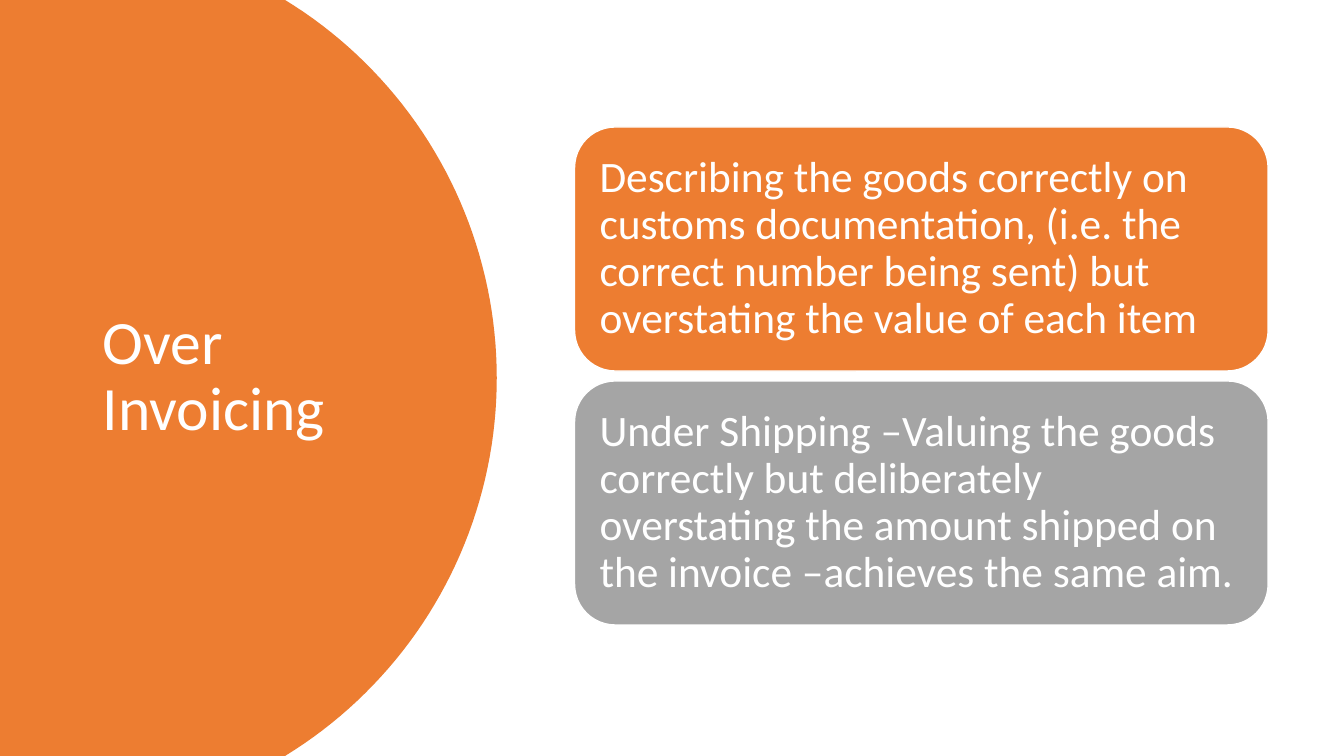
from dataclasses import dataclass
from math import asin, cos, sin

from pptx import Presentation, util as u
from pptx.dml.color import RGBColor
from pptx.enum import shapes, text

COLORS = {"orange": "ED7D31", "gray": "A5A5A5", "white": "FFFFFF"}
SLIDE_WIDTH, SLIDE_HEIGHT = u.Cm(33.87), u.Cm(19.05)
CARD_LEFT, CARD_TOP = 14.48, 3.2
CARD_WIDTH, CARD_HEIGHT, CARD_PITCH = 17.48, 6.15, 6.4
ARC_STEPS = 80


@dataclass
class Card:
    words: str
    color: str


CARDS = [
    Card("Describing the goods correctly on customs documentation, (i.e. the correct "
         "number being sent) but overstating the value of each item", "orange"),
    Card("Under Shipping –Valuing the goods correctly but deliberately overstating "
         "the amount shipped on the invoice –achieves the same aim.", "gray"),
]


def rgb(name: str) -> RGBColor:
    return RGBColor.from_string(COLORS[name])


def paint(shape, color: str) -> None:
    shape.shadow.inherit = False
    shape.fill.solid()
    shape.fill.fore_color.rgb = rgb(color)


def write(shape, words: str, size: float, inset: u.Length) -> None:
    frame = shape.text_frame
    frame.text = words
    frame_format = {
        "word_wrap": True,
        "auto_size": text.MSO_AUTO_SIZE.NONE,
        "vertical_anchor": text.MSO_ANCHOR.MIDDLE,
        "margin_left": inset,
        "margin_right": inset,
        "margin_top": inset,
        "margin_bottom": inset,
    }
    for name, value in frame_format.items():
        setattr(frame, name, value)
    paragraph = frame.paragraphs[0]
    paragraph.alignment = text.PP_ALIGN.LEFT
    paragraph.line_spacing = 0.9
    font = paragraph.runs[0].font
    for name, value in {"name": "Calibri", "size": u.Pt(size)}.items():
        setattr(font, name, value)
    font.color.rgb = rgb("white")


def draw_panel(slide) -> None:
    """Circle segment that runs off the left, top and bottom edges."""
    center_x, radius, middle = u.Cm(1.35), u.Cm(11.17), SLIDE_HEIGHT / 2
    half_angle = asin(middle / radius)
    angles = [half_angle * (2 * step / ARC_STEPS - 1) for step in range(ARC_STEPS + 1)]
    arc = [(round(center_x + radius * cos(angle)), round(middle + radius * sin(angle)))
           for angle in angles]
    builder = slide.shapes.build_freeform(0, 0)
    builder.add_line_segments(arc + [(0, SLIDE_HEIGHT)], close=True)
    panel = builder.convert_to_shape()
    paint(panel, "orange")
    panel.line.fill.background()


def draw_title(slide) -> None:
    title = slide.shapes.title
    position = {"left": 2.34, "top": 1.78, "width": 8.2, "height": 15.47}
    for name, value in position.items():
        setattr(title, name, u.Cm(value))
    write(title, "Over Invoicing", 44, u.Cm(0.25))
    # Bring the title in front of the panel
    slide.shapes._spTree.append(title._element)


def draw_card(slide, card: Card, row: int) -> None:
    shape = slide.shapes.add_shape(
        shapes.MSO_SHAPE.ROUNDED_RECTANGLE,
        u.Cm(CARD_LEFT), u.Cm(CARD_TOP + row * CARD_PITCH),
        u.Cm(CARD_WIDTH), u.Cm(CARD_HEIGHT))
    paint(shape, card.color)
    shape.line.color.rgb = rgb("white")
    shape.line.width = u.Pt(1)
    write(shape, card.words, 31, u.Cm(0.33))


def main() -> None:
    presentation = Presentation()
    presentation.slide_width, presentation.slide_height = SLIDE_WIDTH, SLIDE_HEIGHT
    slide = presentation.slides.add_slide(presentation.slide_layouts.get_by_name("Title Only"))
    slide.background.fill.solid()
    slide.background.fill.fore_color.rgb = rgb("white")

    # Left panel with the title
    draw_panel(slide)
    draw_title(slide)

    # Stacked cards
    for row, card in enumerate(CARDS):
        draw_card(slide, card, row)

    presentation.save("out.pptx")


if __name__ == "__main__":
    main()
